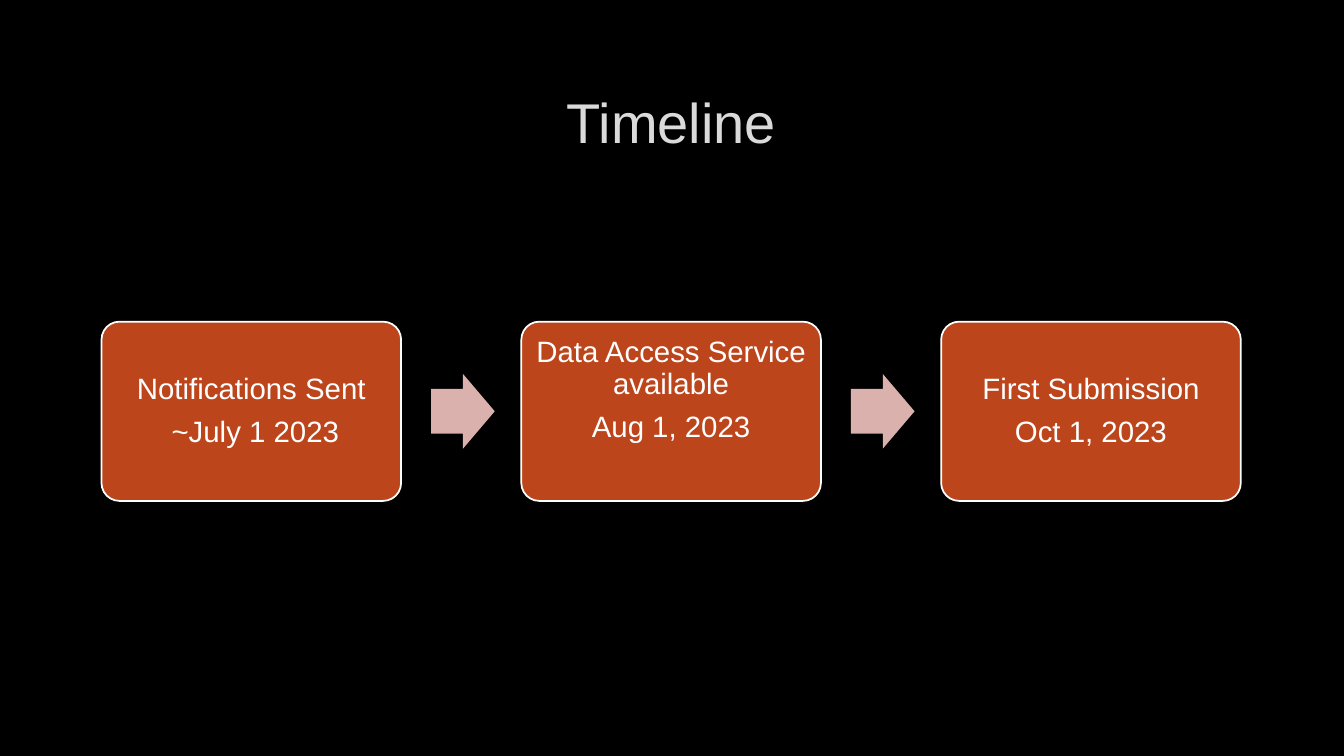
import dataclasses

import lxml.etree
import pptx
import pptx.dml.color
import pptx.enum.shapes
import pptx.enum.text
import pptx.oxml.ns
import pptx.shapes.autoshape
import pptx.slide
import pptx.text.text
import pptx.util

Pt = pptx.util.Pt
Kind = pptx.enum.shapes.MSO_SHAPE

COLORS = {
    "back": "000000",
    "title": "DADADA",
    "edge": "404040",
    "box": "BC451B",
    "arrow": "DAB1AC",
    "white": "FFFFFF",
}
FONT = "Arial"
LEFT, TOP, WIDTH, HEIGHT = 72.5, 229.8, 214, 128
PITCH = 299.9
ARROW_GAP, ARROW_WIDTH, ARROW_HEIGHT = 21.5, 45.4, 53.4
INSET = 6


@dataclasses.dataclass
class Step:
    lines: list[str]
    lift: float = 0  # added bottom inset, which raises the centred text


STEPS = [
    Step(["Notifications Sent", " ~July 1 2023"]),
    Step(["Data Access Service available", "Aug 1, 2023"], lift=30),
    Step(["First Submission", "Oct 1, 2023"]),
]


def color(name: str) -> pptx.dml.color.RGBColor:
    return pptx.dml.color.RGBColor.from_string(COLORS[name])


def write(frame: pptx.text.text.TextFrame, lines: list[str], *, size: float,
          ink: str, leading: float = 1, after: float = 0) -> None:
    frame.word_wrap = True
    frame.auto_size = pptx.enum.text.MSO_AUTO_SIZE.NONE
    frame.vertical_anchor = pptx.enum.text.MSO_ANCHOR.MIDDLE
    for index, line in enumerate(lines):
        para = frame.add_paragraph() if index else frame.paragraphs[0]
        para.alignment = pptx.enum.text.PP_ALIGN.CENTER
        para.line_spacing = leading
        para.space_before = Pt(0)
        para.space_after = Pt(after)
        run = para.add_run()
        run.text = line
        run.font.name = FONT
        run.font.size = Pt(size)
        run.font.color.rgb = color(ink)


def outline(run: pptx.text.text._Run, ink: str, width: float, alpha: int) -> None:
    """Give the letters of a run a line; alpha is its opacity in percent."""
    name = pptx.oxml.ns.qn
    line = lxml.etree.Element(name("a:ln"), w=str(Pt(width)))
    fill = lxml.etree.SubElement(line, name("a:solidFill"))
    tint = lxml.etree.SubElement(fill, name("a:srgbClr"), val=COLORS[ink])
    lxml.etree.SubElement(tint, name("a:alpha"), val=str(alpha * 1000))
    run.font._element.insert(0, line)


def add_shape(slide: pptx.slide.Slide, kind: Kind, left: float, top: float,
              width: float, height: float, *, fill: str,
              adjust: list[float]) -> pptx.shapes.autoshape.Shape:
    shape = slide.shapes.add_shape(kind, Pt(left), Pt(top), Pt(width), Pt(height))
    shape.shadow.inherit = False
    shape.fill.solid()
    shape.fill.fore_color.rgb = color(fill)
    shape.line.fill.background()
    for index, value in enumerate(adjust):
        shape.adjustments[index] = value
    return shape


def add_step(slide: pptx.slide.Slide, step: Step, left: float) -> None:
    box = add_shape(slide, Kind.ROUNDED_RECTANGLE, left, TOP, WIDTH, HEIGHT,
                    fill="box", adjust=[0.1])
    box.line.color.rgb = color("white")
    box.line.width = Pt(1.25)
    frame = box.text_frame
    frame.margin_left = frame.margin_right = frame.margin_top = Pt(INSET)
    frame.margin_bottom = Pt(INSET + step.lift)
    write(frame, step.lines, size=21, ink="white", leading=0.9, after=8)


def add_arrow(slide: pptx.slide.Slide, left: float) -> None:
    top = TOP + (HEIGHT - ARROW_HEIGHT) / 2
    add_shape(slide, Kind.RIGHT_ARROW, left, top, ARROW_WIDTH, ARROW_HEIGHT,
              fill="arrow", adjust=[0.6, 0.5])


def add_title(slide: pptx.slide.Slide, text: str) -> None:
    title = slide.shapes.title
    title.left, title.top = Pt(72), Pt(48)
    title.width, title.height = Pt(815), Pt(76.5)
    write(title.text_frame, [text], size=40, ink="title")
    outline(title.text_frame.paragraphs[0].runs[0], "edge", 0.75, 10)


def main() -> None:
    deck = pptx.Presentation()
    deck.slide_width, deck.slide_height = Pt(960), Pt(540)
    slide = deck.slides.add_slide(deck.slide_layouts.get_by_name("Title Only"))
    slide.background.fill.solid()
    slide.background.fill.fore_color.rgb = color("back")
    add_title(slide, "Timeline")
    for index, step in enumerate(STEPS):
        left = LEFT + index * PITCH
        if index:
            add_arrow(slide, left - PITCH + WIDTH + ARROW_GAP)
        add_step(slide, step, left)
    deck.save("out.pptx")


if __name__ == "__main__":
    main()
